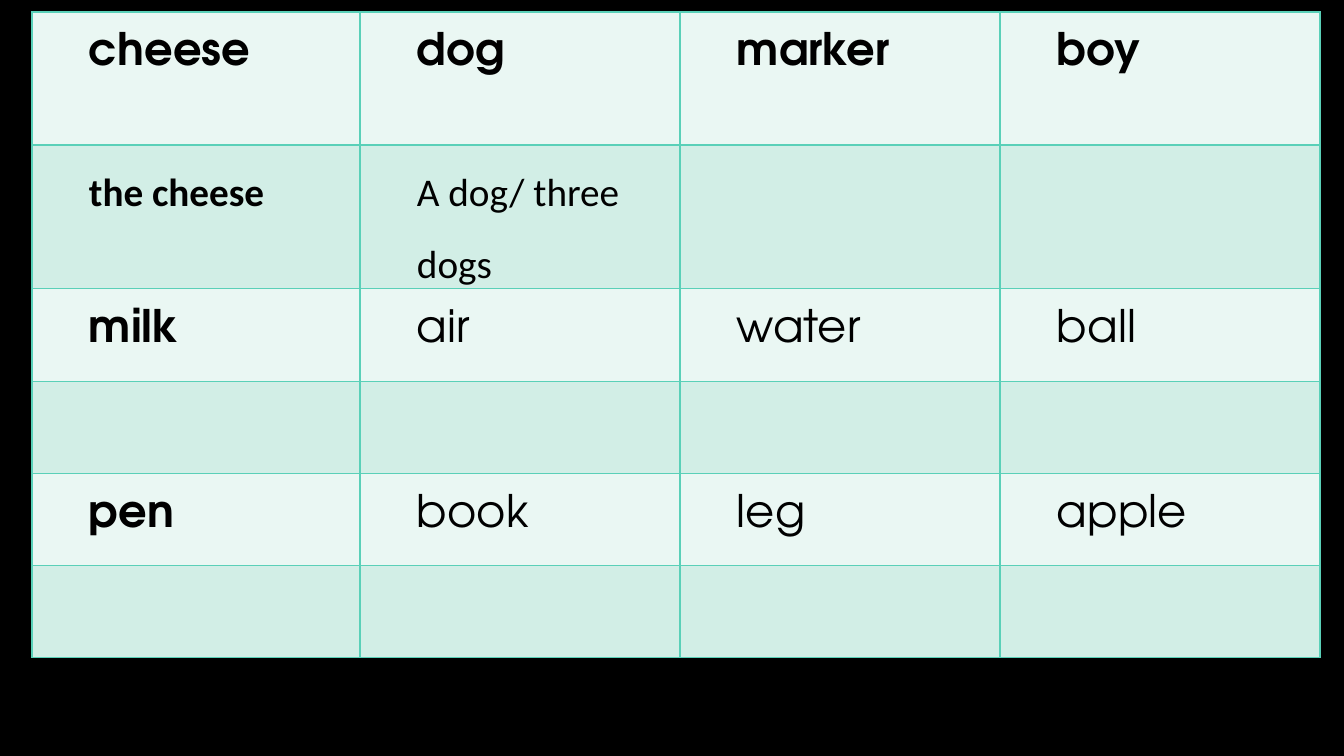
from dataclasses import dataclass

from lxml.etree import SubElement
from pptx import Presentation
from pptx.dml.color import RGBColor as Color
from pptx.oxml.ns import qn
from pptx.util import Emu, Pt

EMU_PER_PX = 914400 / 100.8


@dataclass(frozen=True)
class Theme:
    background: str = "000000"
    text: str = "000000"
    border: str = "5AD0B8"
    bands: tuple = ("EAF7F3", "D2EEE6")
    word_font: str = "TeX Gyre Adventor"
    answer_font: str = "Calibri"
    word_size: int = 32
    answer_size: int = 28
    border_width: int = 1
    line_spacing: float = 1.5


THEME = Theme()

# Rows of nouns alternate with rows for the answers
NOUN_ROWS = [
    ["cheese", "dog", "marker", "boy"],
    ["the cheese", "A dog/ three dogs", "", ""],
    ["milk", "air", "water", "ball"],
    ["", "", "", ""],
    ["pen", "book", "leg", "apple"],
    ["", "", "", ""],
]
COLUMN_WIDTHS = [328, 320, 320, 320]
ROW_HEIGHTS = [133, 143, 93, 92, 92, 92]
CELL_MARGIN = 7
TEXT_INDENT = 50


def px(length):
    return Emu(round(length * EMU_PER_PX))


def set_values(target, values):
    for name, value in values.items():
        setattr(target, name, value)


def add_borders(cell):
    properties = cell._tc.get_or_add_tcPr()
    for side in ("lnL", "lnR", "lnT", "lnB"):
        line = SubElement(properties, qn(f"a:{side}"), w=str(Pt(THEME.border_width)))
        fill = SubElement(line, qn("a:solidFill"))
        SubElement(fill, qn("a:srgbClr"), val=THEME.border)


def write_word(cell, word, is_answer, bold):
    paragraph = cell.text_frame.paragraphs[0]
    paragraph.line_spacing = THEME.line_spacing
    paragraph._p.get_or_add_pPr().set("marL", str(px(TEXT_INDENT)))
    run = paragraph.add_run()
    run.text = word
    set_values(run.font, {
        "name": THEME.answer_font if is_answer else THEME.word_font,
        "size": Pt(THEME.answer_size if is_answer else THEME.word_size),
        "bold": bold,
    })
    run.font.color.rgb = Color.from_string(THEME.text)


def add_noun_table(slide, left, top, width, height):
    shape = slide.shapes.add_table(len(NOUN_ROWS), len(COLUMN_WIDTHS),
                                   px(left), px(top), px(width), px(height))
    table = shape.table
    set_values(table, {"first_row": False, "horz_banding": False})
    for column, column_width in zip(table.columns, COLUMN_WIDTHS):
        column.width = px(column_width)
    for row, row_height in zip(table.rows, ROW_HEIGHTS):
        row.height = px(row_height)

    # Cells: borders, band colour, then the word
    for row_index, words in enumerate(NOUN_ROWS):
        band = row_index % 2
        for column_index, word in enumerate(words):
            cell = table.cell(row_index, column_index)
            set_values(cell, {
                "margin_left": px(CELL_MARGIN), "margin_right": px(CELL_MARGIN),
                "margin_top": 0, "margin_bottom": 0,
            })
            add_borders(cell)
            cell.fill.solid()
            cell.fill.fore_color.rgb = Color.from_string(THEME.bands[band])
            if word:
                write_word(cell, word, is_answer=band == 1,
                           bold=row_index == 0 or column_index == 0)


def main():
    presentation = Presentation()
    set_values(presentation, {"slide_width": px(1344), "slide_height": px(756)})
    slide = presentation.slides.add_slide(presentation.slide_layouts[6])

    # Background
    background = slide.background.fill
    background.solid()
    background.fore_color.rgb = Color.from_string(THEME.background)

    # Table
    add_noun_table(slide, 32, 12, sum(COLUMN_WIDTHS), sum(ROW_HEIGHTS))
    presentation.save("out.pptx")


if __name__ == "__main__":
    main()
